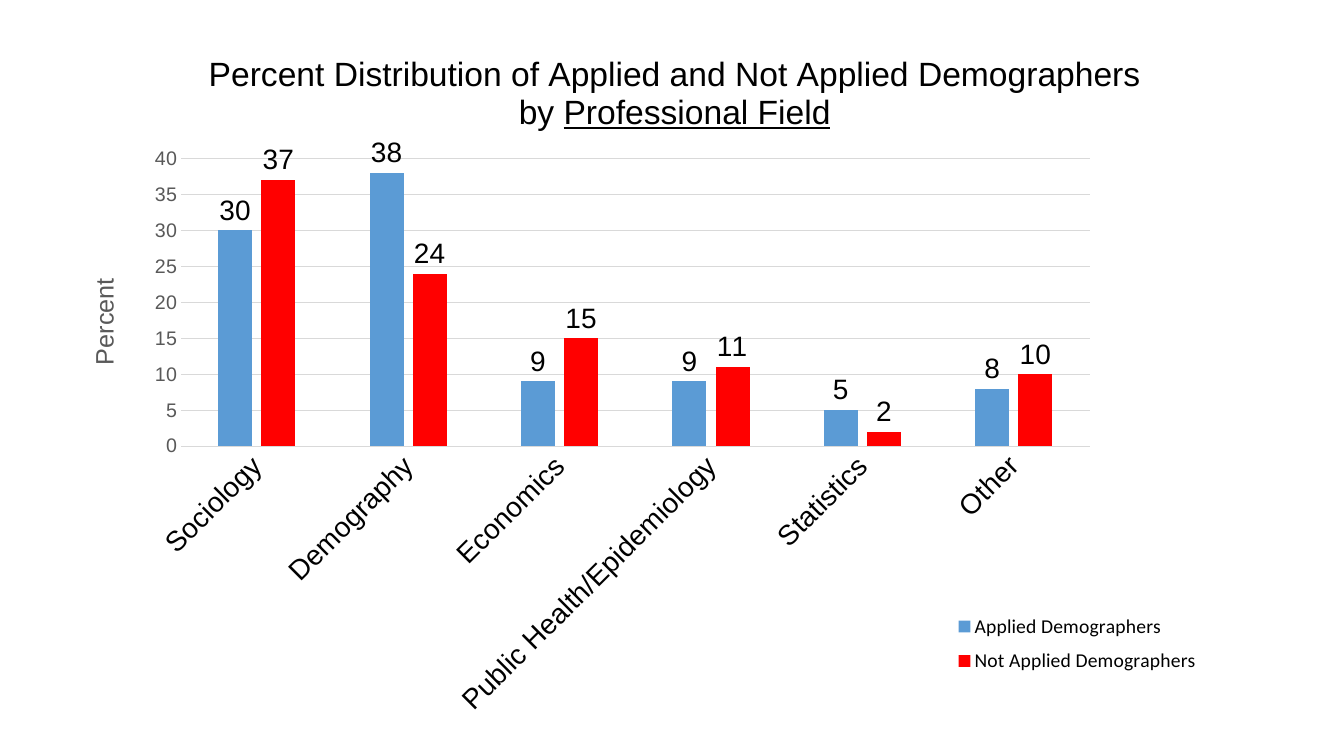
from lxml.etree import SubElement
from pptx import Presentation
from pptx.chart.data import CategoryChartData
from pptx.dml.color import RGBColor
from pptx.enum.chart import XL_CHART_TYPE, XL_LABEL_POSITION, XL_LEGEND_POSITION, XL_TICK_MARK
from pptx.oxml import parse_xml
from pptx.oxml.ns import nsdecls, qn
from pptx.util import Cm, Pt

BLACK = RGBColor(0x00, 0x00, 0x00)
GREY = RGBColor(0x59, 0x59, 0x59)
GRID = RGBColor(0xD9, 0xD9, 0xD9)
BLUE = RGBColor(0x5B, 0x9B, 0xD5)
RED = RGBColor(0xFF, 0x00, 0x00)


def set_font(font, size, color, name="Arial"):
    font.size = Pt(size)
    font.bold = False
    font.name = name
    font.color.rgb = color


def set_layout(parent, index, target=None, **fractions):
    """Place a chart part by hand, in fractions of the chart's size."""
    for old in parent.findall(qn("c:layout")):
        parent.remove(old)
    layout = parse_xml(f"<c:layout {nsdecls('c')}><c:manualLayout/></c:layout>")
    if target:
        SubElement(layout[0], qn("c:layoutTarget")).set("val", target)
    for key in ("x", "y"):
        SubElement(layout[0], qn(f"c:{key}Mode")).set("val", "edge")
    for key, value in fractions.items():
        SubElement(layout[0], qn(f"c:{key}")).set("val", str(value))
    parent.insert(index, layout)


prs = Presentation()
prs.slide_width, prs.slide_height = Cm(33.87), Cm(19.05)
s = prs.slides.add_slide(prs.slide_layouts[6])

data = CategoryChartData(number_format="0")
data.categories = ["Sociology", "Demography", "Economics",
                   "Public Health/Epidemiology", "Statistics", "Other"]
data.add_series("Applied Demographers", (30, 38, 9, 9, 5, 8))
data.add_series("Not Applied Demographers", (37, 24, 15, 11, 2, 10))
chart = s.shapes.add_chart(XL_CHART_TYPE.COLUMN_CLUSTERED, Cm(1.47), Cm(0.74),
                           Cm(30.94), Cm(18.11), data).chart
set_font(chart.font, 10, BLACK, "Calibri")
root = chart.element

# Title
p = chart.chart_title.text_frame.paragraphs[0]
p.text = "Percent Distribution of Applied and Not Applied Demographers by "
p.add_run().text = "Professional Field"
for r in p.runs:
    set_font(r.font, 24, BLACK)
p.runs[1].font.underline = True
set_layout(chart.chart_title.element, 1, x=0.12, y=0.03)

# Columns and their labels
plot = chart.plots[0]
plot.vary_by_categories = False
plot.gap_width = 219
plot.overlap = -27
for series, color in zip(plot.series, (BLUE, RED)):
    series.format.fill.solid()
    series.format.fill.fore_color.rgb = color
    labels = series.data_labels
    labels.show_value = True
    labels.position = XL_LABEL_POSITION.OUTSIDE_END
    labels.number_format = "0"
    labels.number_format_is_linked = False
    set_font(labels.font, 20, BLACK)
set_layout(root.find(".//" + qn("c:plotArea")), 0, "inner", x=0.1, y=0.18, w=0.74, h=0.4)

# Axes
fields, percent = chart.category_axis, chart.value_axis
for axis in (fields, percent):
    axis.major_tick_mark = axis.minor_tick_mark = XL_TICK_MARK.NONE
set_font(fields.tick_labels.font, 20, BLACK)
field_text = root.find(".//" + qn("c:catAx")).find(qn("c:txPr"))
field_text.find(qn("a:bodyPr")).set("rot", "-2700000")
set_font(percent.tick_labels.font, 14, GREY)
percent.tick_labels.number_format = "0"
percent.tick_labels.number_format_is_linked = False
percent.minimum_scale, percent.maximum_scale, percent.major_unit = 0, 40, 5
percent.format.line.fill.background()
for line in (fields.format.line, percent.major_gridlines.format.line):
    line.color.rgb = GRID
    line.width = Pt(0.75)

tf = percent.axis_title.text_frame
tf.text = "Percent"
set_font(tf.paragraphs[0].runs[0].font, 18, GREY)
percent_title = root.find(".//" + qn("c:valAx")).find(qn("c:title"))
body = percent_title.find(".//" + qn("a:bodyPr"))
body.set("rot", "-5400000")
body.set("vert", "horz")
set_layout(percent_title, 1, x=0.02, y=0.34)

# Legend
chart.has_legend = True
legend = chart.legend
legend.position = XL_LEGEND_POSITION.RIGHT
legend.include_in_layout = False
set_font(legend.font, 14, BLACK, "Calibri")
set_layout(root.find(".//" + qn("c:legend")), 1, x=0.72, y=0.8, w=0.22, h=0.11)

prs.save("out.pptx")
